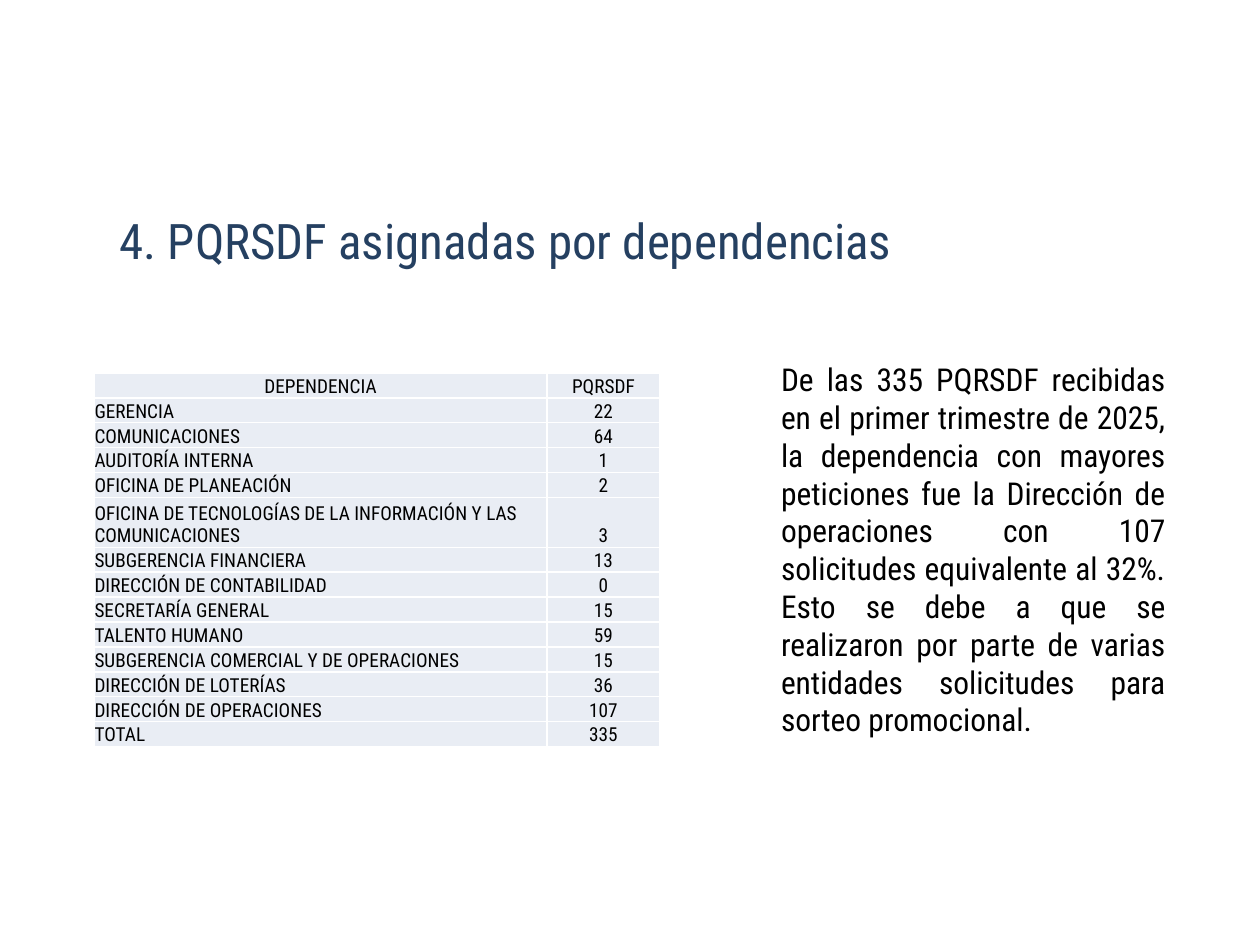
from lxml.etree import SubElement
from pptx import Presentation
from pptx.dml.color import RGBColor
from pptx.enum.text import MSO_ANCHOR, MSO_AUTO_SIZE, PP_ALIGN
from pptx.oxml.ns import qn
from pptx.util import Inches, Pt

FONT = "Roboto Condensed"
HEADING = "4. PQRSDF asignadas por dependencias"
SUMMARY = (
    "De las 335 PQRSDF recibidas en el primer trimestre de 2025, la dependencia "
    "con mayores peticiones fue la Dirección de operaciones con 107 solicitudes "
    "equivalente al 32%. Esto se debe a que se realizaron por parte de varias "
    "entidades solicitudes para sorteo promocional."
)
REQUESTS = [
    ("DEPENDENCIA", "PQRSDF"),
    ("GERENCIA", 22),
    ("COMUNICACIONES", 64),
    ("AUDITORÍA INTERNA", 1),
    ("OFICINA DE PLANEACIÓN", 2),
    ("OFICINA DE TECNOLOGÍAS DE LA INFORMACIÓN Y LAS COMUNICACIONES", 3),
    ("SUBGERENCIA FINANCIERA", 13),
    ("DIRECCIÓN DE CONTABILIDAD", 0),
    ("SECRETARÍA GENERAL", 15),
    ("TALENTO HUMANO", 59),
    ("SUBGERENCIA COMERCIAL Y DE OPERACIONES", 15),
    ("DIRECCIÓN DE LOTERÍAS", 36),
    ("DIRECCIÓN DE OPERACIONES", 107),
    ("TOTAL", 335),
]
TWO_LINE_ROW = 5


def color(hex_code):
    """Turn a hex string into a colour."""
    return RGBColor.from_string(hex_code)


def write(frame, text, size, hex_code, align):
    """Fill a text frame with one formatted paragraph."""
    frame.text = text
    paragraph = frame.paragraphs[0]
    paragraph.alignment = align
    paragraph.font.name = FONT
    paragraph.font.size = Pt(size)
    paragraph.font.color.rgb = color(hex_code)
    return paragraph


def add_heading(slide, left, top, width, height):
    """Place the slide title in its box."""
    title = slide.shapes.title
    title.left, title.top, title.width, title.height = left, top, width, height
    frame = title.text_frame
    frame.auto_size = MSO_AUTO_SIZE.NONE
    frame.vertical_anchor = MSO_ANCHOR.TOP
    frame.margin_left = Inches(0.6)
    heading = write(frame, HEADING, 28, "254061", PP_ALIGN.LEFT)
    heading.line_spacing = 1.5


def add_summary(slide, left, top, width, height):
    """Place the justified commentary in its box."""
    frame = slide.shapes.add_textbox(left, top, width, height).text_frame
    frame.word_wrap = True
    write(frame, SUMMARY, 18, "000000", PP_ALIGN.JUSTIFY)


def set_borders(cell, hex_code, points):
    """Draw the same line on all four sides of a cell."""
    properties = cell._tc.get_or_add_tcPr()
    for position, side in enumerate(("a:lnL", "a:lnR", "a:lnT", "a:lnB")):
        line = SubElement(properties, qn(side), w=str(Pt(points)))
        properties.insert(position, line)
        fill = SubElement(line, qn("a:solidFill"))
        SubElement(fill, qn("a:srgbClr"), val=hex_code)


def add_requests_table(slide, left, top, width, height):
    """Place the table of requests per department in its box."""
    table = slide.shapes.add_table(len(REQUESTS), 2, left, top, width, height).table
    count_width = Inches(0.9)
    table.columns[0].width = width - count_width
    table.columns[1].width = count_width
    line_height = height // (len(REQUESTS) + 1)
    for row, record in enumerate(REQUESTS):
        table.rows[row].height = line_height * (2 if row == TWO_LINE_ROW else 1)
        for column, value in enumerate(record):
            cell = table.cell(row, column)
            cell.margin_left = cell.margin_right = 0
            cell.margin_top = cell.margin_bottom = 0
            cell.vertical_anchor = MSO_ANCHOR.BOTTOM
            cell.fill.solid()
            cell.fill.fore_color.rgb = color("E9EDF4")
            set_borders(cell, "FFFFFF", 1)
            centered = row == 0 or column == 1
            align = PP_ALIGN.CENTER if centered else PP_ALIGN.LEFT
            paragraph = write(cell.text_frame, str(value), 11, "000000", align)
            paragraph.font.bold = False


def main():
    """Build and save the slide."""
    deck = Presentation()
    deck.slide_width, deck.slide_height = Inches(10), Inches(7.5)
    slide = deck.slides.add_slide(deck.slide_layouts[5])
    add_heading(slide, Inches(0.35), Inches(1.39), Inches(6.95), Inches(0.72))
    add_summary(slide, Inches(6.1), Inches(2.81), Inches(3.25), Inches(2.83))
    add_requests_table(slide, Inches(0.75), Inches(2.96), Inches(4.49), Inches(2.97))
    deck.save("out.pptx")


if __name__ == "__main__":
    main()
